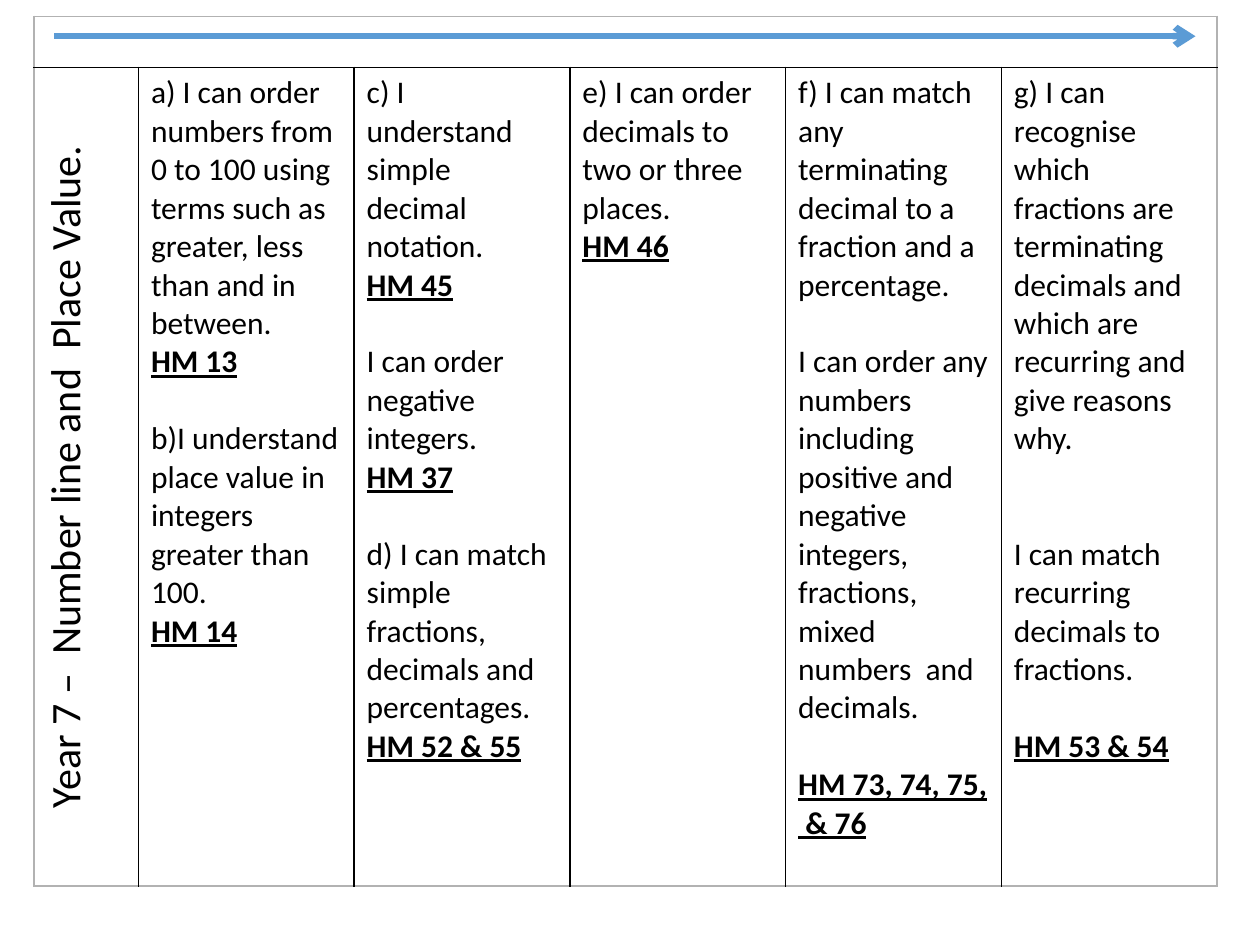
from dataclasses import dataclass
from typing import Any

from lxml import etree
from pptx import Presentation
from pptx import util as u
from pptx.dml import color
from pptx.enum import shapes, text
from pptx.oxml import ns

TITLE = "Year 7 –  Number line and  Place Value."
GOAL, CODE = False, True
# Each entry: kind, blank lines above, wording
COLUMNS = [
    [
        (GOAL, 0, "a) I can order numbers from 0 to 100 using terms such as greater, less than and in between."),
        (CODE, 0, "HM 13"),
        (GOAL, 1, "b)I understand place value in integers greater than 100."),
        (CODE, 0, "HM 14"),
    ],
    [
        (GOAL, 0, "c) I understand simple decimal notation."),
        (CODE, 0, "HM 45"),
        (GOAL, 1, "I can order negative integers."),
        (CODE, 0, "HM 37"),
        (GOAL, 1, "d) I can match simple fractions, decimals and percentages."),
        (CODE, 0, "HM 52 & 55"),
    ],
    [
        (GOAL, 0, "e) I can order decimals to two or three places."),
        (CODE, 0, "HM 46"),
    ],
    [
        (GOAL, 0, "f) I can match any  terminating decimal to a fraction and a percentage."),
        (GOAL, 1, "I can order any numbers including positive and negative integers, "
                  "fractions, mixed numbers  and decimals."),
        (CODE, 1, "HM 73, 74, 75,  & 76"),
    ],
    [
        (GOAL, 0, "g) I can recognise which fractions are terminating decimals "
                  "and which are recurring and give reasons why."),
        (GOAL, 2, "I can match recurring decimals to fractions."),
        (CODE, 1, "HM 53 & 54"),
    ],
]


def rgb(value):
    return color.RGBColor.from_string(value)


@dataclass
class Sheet:
    """Holds the style and the current slide, and adds elements to it."""

    page: Any
    font: str = "Calibri"
    ink: str = "000000"
    frame: str = "B2B2B2"
    accent: str = "5B9BD5"
    size: int = 18
    line_height: int = 22

    def table(self, left, top, widths, heights):
        width, height = sum(widths), sum(heights)
        holder = self.page.shapes.add_table(
            len(heights), len(widths), u.Cm(left), u.Cm(top), u.Cm(width), u.Cm(height))
        grid = holder.table
        grid.first_row = grid.horz_banding = False
        for column, size in zip(grid.columns, widths):
            column.width = u.Cm(size)
        for row, size in zip(grid.rows, heights):
            row.height = u.Cm(size)
        grid.cell(0, 0).merge(grid.cell(0, len(widths) - 1))
        last = len(widths) - 1
        for index in range(len(widths)):
            left_edge = self.frame if index == 0 else self.ink
            right_edge = self.frame if index == last else self.ink
            self.borders(grid.cell(0, index), self.frame, self.frame, self.frame, self.ink)
            self.borders(grid.cell(1, index), left_edge, right_edge, self.ink, self.frame)
        return grid

    def borders(self, cell, *edges):
        properties = cell._tc.get_or_add_tcPr()
        for side, edge in zip("LRTB", edges):
            line = etree.SubElement(properties, ns.qn(f"a:ln{side}"), w=str(u.Pt(1)))
            fill = etree.SubElement(line, ns.qn("a:solidFill"))
            etree.SubElement(fill, ns.qn("a:srgbClr"), val=edge)
        cell.fill.background()

    def span(self, para, wording, size, strong=False):
        span = para.add_run()
        span.text = wording
        span.font.name = self.font
        span.font.size = u.Pt(size)
        span.font.bold = span.font.underline = strong
        span.font.color.rgb = rgb(self.ink)

    def heading(self, cell, wording):
        cell._tc.get_or_add_tcPr().set("vert", "vert270")
        para = cell.text_frame.paragraphs[0]
        para.alignment = text.PP_ALIGN.CENTER
        self.span(para, wording, 24)

    def goals(self, cell, entries):
        frame = cell.text_frame
        for index, (strong, gap, wording) in enumerate(entries):
            para = frame.add_paragraph() if index else frame.paragraphs[0]
            para.space_before = u.Pt(gap * self.line_height)
            self.span(para, wording, self.size, strong)

    def arrow(self, start, end, y):
        arrow = self.page.shapes.add_connector(
            shapes.MSO_CONNECTOR.STRAIGHT, u.Cm(start), u.Cm(y), u.Cm(end), u.Cm(y))
        arrow.line.color.rgb = rgb(self.accent)
        arrow.line.width = u.Pt(3.75)
        etree.SubElement(arrow.line._get_or_add_ln(), ns.qn("a:tailEnd"), type="arrow")
        etree.SubElement(arrow._element.spPr, ns.qn("a:effectLst"))


def main():
    deck = Presentation()
    deck.slide_width, deck.slide_height = u.Cm(25.4), u.Cm(19.05)
    sheet = Sheet(deck.slides.add_slide(deck.slide_layouts[6]))
    grid = sheet.table(0.69, 0.33, [2.1] + [4.35] * len(COLUMNS), [1.03, 16.5])
    sheet.heading(grid.cell(1, 0), TITLE)
    for index, entries in enumerate(COLUMNS, start=1):
        sheet.goals(grid.cell(1, index), entries)
    sheet.arrow(1.09, 24.1, 0.73)
    deck.save("out.pptx")


if __name__ == "__main__":
    main()
